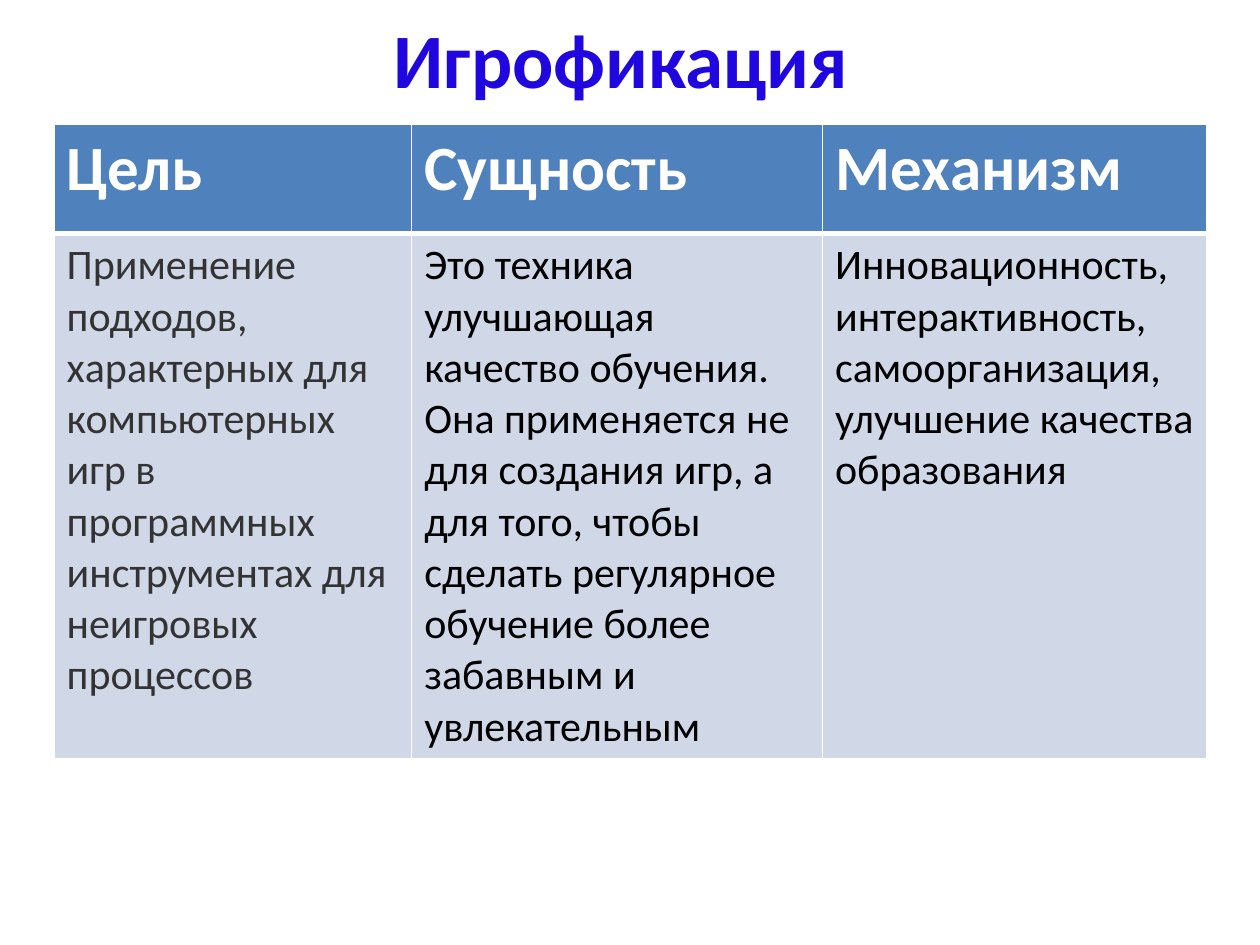
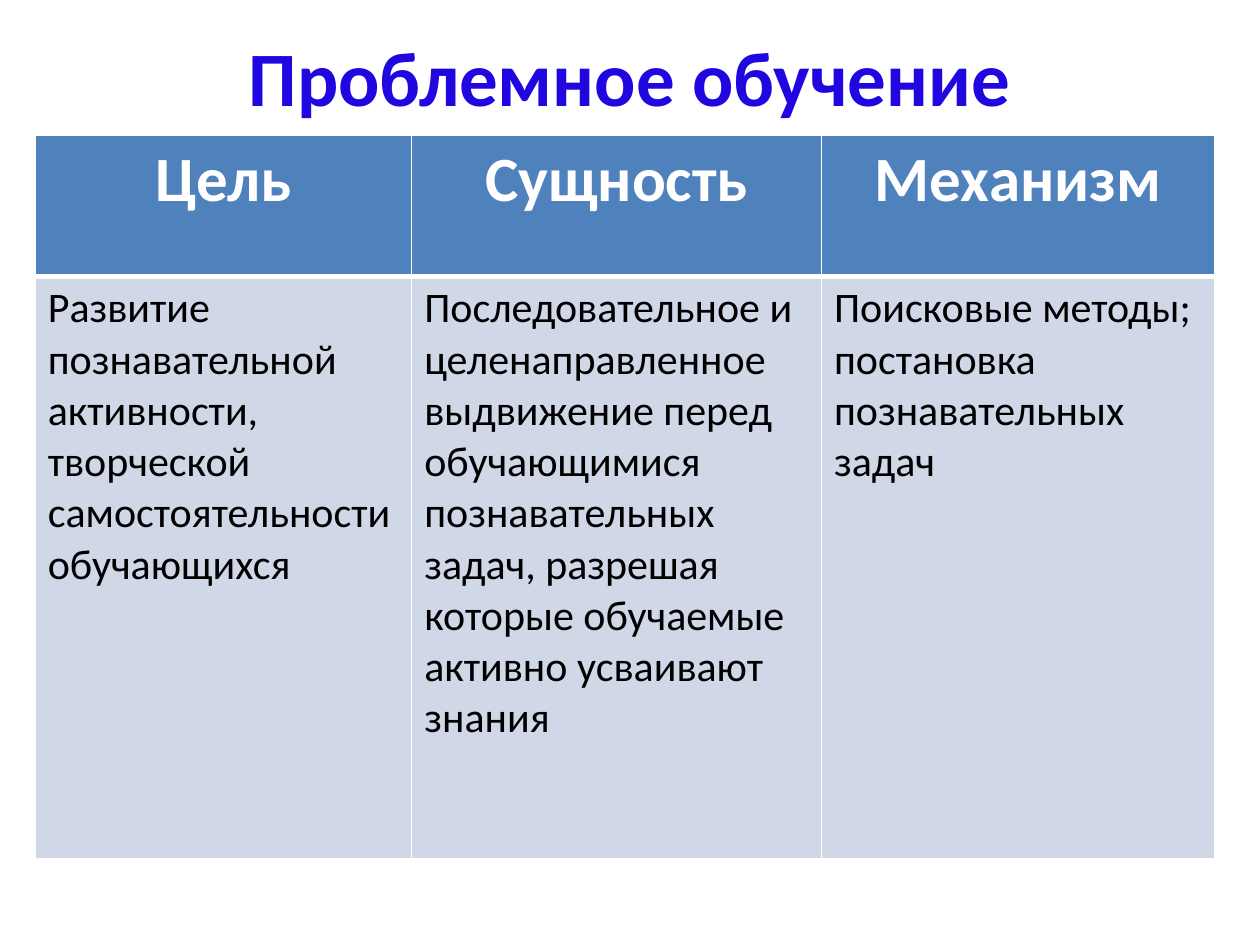
from dataclasses import dataclass

from lxml import etree
from pptx import Presentation
from pptx.dml.color import RGBColor
from pptx.enum.text import MSO_ANCHOR, PP_ALIGN
from pptx.oxml.ns import qn
from pptx.util import Cm, Pt

LEFT, CENTER = PP_ALIGN.LEFT, PP_ALIGN.CENTER
MIDDLE = MSO_ANCHOR.MIDDLE
TITLE_ONLY = 5


@dataclass(frozen=True)
class Theme:
    font: str = "Calibri"
    title: str = "2107DF"
    header_fill: str = "4F81BD"
    body_fill: str = "D0D8E8"
    header_text: str = "FFFFFF"
    body_text: str = "000000"
    muted_text: str = "333333"
    border: str = "FFFFFF"
    title_size: int = 44
    header_size: int = 36
    body_size: int = 24
    thin: int = 1
    thick: int = 3


THEME = Theme()
HEADERS = ["Цель", "Сущность", "Механизм"]

SLIDES = [
    {
        "title": "Игрофикация ",
        "title_top": 0,
        "title_height": 2.34,
        "table_at": (1.09, 2.51),
        "columns": [7.21, 8.28, 7.75],
        "rows": [2.2, 10.4],
        "header_align": LEFT,
        "body_colors": [THEME.muted_text, THEME.body_text, THEME.body_text],
        "body": [
            "Применение подходов, характерных для компьютерных игр в "
            "программных инструментах для неигровых процессов",
            "Это техника улучшающая качество обучения. Она применяется не для "
            "создания игр, а для того, чтобы сделать регулярное обучение более "
            "забавным и увлекательным",
            "Инновационность,\n"
            "интерактивность, самоорганизация, улучшение качества образования",
        ],
    },
    {
        "title": "Проблемное обучение",
        "title_top": 0.33,
        "title_height": 2.38,
        "table_at": (0.71, 2.72),
        "columns": [7.59, 8.26, 7.92],
        "rows": [2.86, 11.74],
        "header_align": CENTER,
        "body_colors": [THEME.body_text] * 3,
        "body": [
            "Развитие познавательной активности, творческой "
            "самостоятельности обучающихся",
            "Последовательное и целенаправленное выдвижение перед обучающимися "
            "познавательных задач, разрешая которые обучаемые активно "
            "усваивают знания",
            "Поисковые методы; постановка познавательных задач",
        ],
    },
]


def format_text(frame, size, color, bold, align):
    for para in frame.paragraphs:
        para.alignment = align
        for span in para.runs:
            span.font.name = THEME.font
            span.font.size = Pt(size)
            span.font.bold = bold
            span.font.color.rgb = RGBColor.from_string(color)


def set_borders(cell, top, bottom):
    properties = cell._tc.get_or_add_tcPr()
    widths = {"lnL": THEME.thin, "lnR": THEME.thin, "lnT": top, "lnB": bottom}
    for position, (side, width) in enumerate(widths.items()):
        line = etree.Element(qn(f"a:{side}"), w=str(Pt(width)))
        fill = etree.SubElement(line, qn("a:solidFill"))
        etree.SubElement(fill, qn("a:srgbClr"), val=THEME.border)
        properties.insert(position, line)


def fill_cell(cell, text, fill):
    cell.text_frame.text = text
    cell.fill.solid()
    cell.fill.fore_color.rgb = RGBColor.from_string(fill)


def add_title(page, content):
    title = page.shapes.title
    title.left, title.width = Cm(1.27), Cm(22.86)
    title.top, title.height = Cm(content["title_top"]), Cm(content["title_height"])
    title.text_frame.text = content["title"]
    title.text_frame.vertical_anchor = MIDDLE
    format_text(title.text_frame, THEME.title_size, THEME.title, True, CENTER)


def add_comparison(page, content):
    columns, rows = content["columns"], content["rows"]
    left, top = content["table_at"]
    table = page.shapes.add_table(
        len(rows), len(columns), Cm(left), Cm(top), Cm(sum(columns)), Cm(sum(rows))
    ).table
    table.horz_banding = False
    for column, width in zip(table.columns, columns):
        column.width = Cm(width)
    for row, height in zip(table.rows, rows):
        row.height = Cm(height)

    for index, (header, body) in enumerate(zip(HEADERS, content["body"])):
        head_cell, body_cell = table.cell(0, index), table.cell(1, index)
        fill_cell(head_cell, header, THEME.header_fill)
        fill_cell(body_cell, body, THEME.body_fill)
        format_text(head_cell.text_frame, THEME.header_size, THEME.header_text,
                    True, content["header_align"])
        format_text(body_cell.text_frame, THEME.body_size,
                    content["body_colors"][index], False, LEFT)
        set_borders(head_cell, THEME.thin, THEME.thick)
        set_borders(body_cell, THEME.thick, THEME.thin)


def main():
    deck = Presentation()
    deck.slide_width, deck.slide_height = Cm(25.4), Cm(19.05)
    for content in SLIDES:
        page = deck.slides.add_slide(deck.slide_layouts[TITLE_ONLY])
        add_title(page, content)
        add_comparison(page, content)
    deck.save("out.pptx")


if __name__ == "__main__":
    main()
